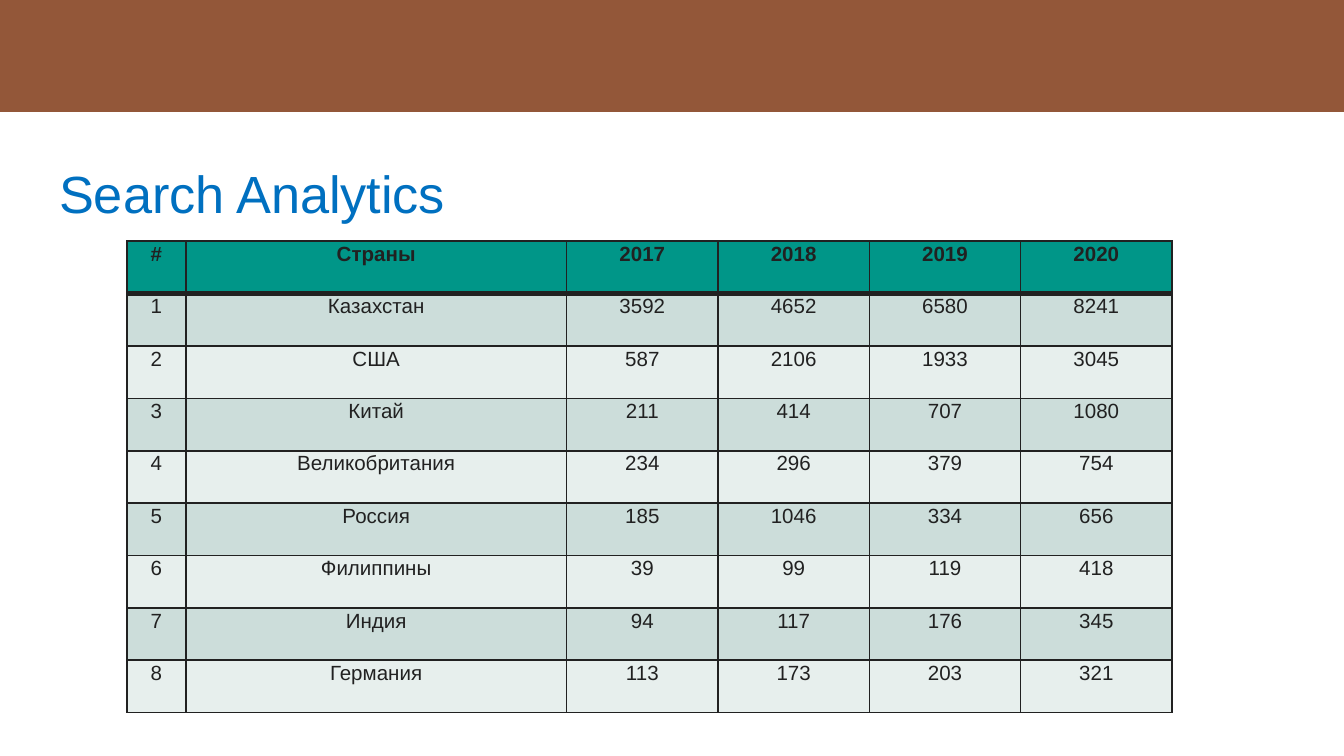
from lxml.etree import SubElement
from pptx import Presentation
from pptx.dml.color import RGBColor
from pptx.enum.shapes import MSO_SHAPE as Preset
from pptx.enum.text import MSO_ANCHOR as Anchor, PP_ALIGN as Align
from pptx.oxml.ns import qn
from pptx.util import Cm, Pt

INK = RGBColor(0x21, 0x21, 0x21)
WHITE = RGBColor(0xFF, 0xFF, 0xFF)
BROWN = RGBColor(0x93, 0x57, 0x39)
BLUE = RGBColor(0x00, 0x70, 0xC0)
TEAL = RGBColor(0x00, 0x96, 0x88)
BAND_DARK = RGBColor(0xCC, 0xDD, 0xDA)
BAND_LIGHT = RGBColor(0xE7, 0xEF, 0xED)

PAGE_WIDTH, PAGE_HEIGHT, BANNER_HEIGHT = 25.4, 14.29, 2.11
COLUMN_WIDTHS = [1.11, 7.2] + [2.86] * 4
ROW_HEIGHT = 0.99
HEADINGS = ["#", "Страны", "2017", "2018", "2019", "2020"]
COUNTRIES = [
    ("Казахстан", 3592, 4652, 6580, 8241),
    ("США", 587, 2106, 1933, 3045),
    ("Китай", 211, 414, 707, 1080),
    ("Великобритания", 234, 296, 379, 754),
    ("Россия", 185, 1046, 334, 656),
    ("Филиппины", 39, 99, 119, 418),
    ("Индия", 94, 117, 176, 345),
    ("Германия", 113, 173, 203, 321),
]


def assign(target, values):
    for name, value in values.items():
        setattr(target, name, value)


class PageBuilder:
    font_name = "Arial"

    def __init__(self, page):
        self.page = page

    def background(self, color):
        fill = self.page.background.fill
        fill.solid()
        fill.fore_color.rgb = color

    def panel(self, top, height, color, line_width):
        shape = self.page.shapes.add_shape(
            Preset.RECTANGLE, Cm(0), Cm(top), Cm(PAGE_WIDTH), Cm(height))
        shape.shadow.inherit = False
        shape.fill.solid()
        shape.fill.fore_color.rgb = color
        shape.line.color.rgb = color
        shape.line.width = Pt(line_width)

    def add_span(self, para, text, size, color, bold=False):
        span = para.add_run()
        span.text = text
        assign(span.font, {"name": self.font_name, "size": Pt(size), "bold": bold})
        span.font.color.rgb = color

    def title(self, text, left, top, width, height):
        box = self.page.shapes.add_textbox(Cm(left), Cm(top), Cm(width), Cm(height))
        inset = Cm(0.25)
        assign(box.text_frame, {
            "word_wrap": True, "vertical_anchor": Anchor.TOP,
            "margin_left": inset, "margin_right": inset,
            "margin_top": inset, "margin_bottom": inset})
        self.add_span(box.text_frame.paragraphs[0], text, 28, BLUE)

    def borders(self, cell, widths):
        properties = cell._tc.get_or_add_tcPr()
        for side, width in widths.items():
            line = SubElement(properties, qn(f"a:ln{side}"), w=str(Pt(width)))
            fill = SubElement(line, qn("a:solidFill"))
            SubElement(fill, qn("a:srgbClr"), val=str(INK))

    def cell(self, cell, text, color, bold, widths):
        self.borders(cell, widths)
        cell.fill.solid()
        cell.fill.fore_color.rgb = color
        assign(cell, {
            "margin_left": Cm(0.18), "margin_right": Cm(0.18),
            "margin_top": 0, "margin_bottom": 0})
        para = cell.text_frame.paragraphs[0]
        assign(para, {"alignment": Align.CENTER, "line_spacing": 1.07,
                      "space_after": Pt(10)})
        self.add_span(para, text, 11, INK, bold)

    def table(self, rows, left, top):
        table = self.page.shapes.add_table(
            len(rows), len(COLUMN_WIDTHS), Cm(left), Cm(top),
            Cm(sum(COLUMN_WIDTHS)), Cm(ROW_HEIGHT * len(rows))).table
        for column, width in zip(table.columns, COLUMN_WIDTHS):
            column.width = Cm(width)
        for number, values in enumerate(rows):
            table.rows[number].height = Cm(ROW_HEIGHT)
            heading = number == 0
            band = BAND_DARK if number % 2 else BAND_LIGHT
            color = TEAL if heading else band
            widths = {"L": 1, "R": 1, "T": 3 if number == 1 else 1,
                      "B": 3 if heading else 1}
            for position, value in enumerate(values):
                self.cell(table.cell(number, position), str(value),
                          color, heading, widths)


def main():
    deck = Presentation()
    assign(deck, {"slide_width": Cm(PAGE_WIDTH), "slide_height": Cm(PAGE_HEIGHT)})
    builder = PageBuilder(deck.slides.add_slide(deck.slide_layouts[6]))
    builder.background(INK)
    builder.panel(BANNER_HEIGHT, PAGE_HEIGHT - BANNER_HEIGHT, WHITE, 2)
    builder.panel(0, BANNER_HEIGHT, BROWN, 0.75)
    builder.title("Search Analytics", 0.87, 2.8, 23.67, 1.6)
    ranked = [(rank, *country) for rank, country in enumerate(COUNTRIES, 1)]
    builder.table([HEADINGS] + ranked, 2.4, 4.56)
    deck.save("out.pptx")


if __name__ == "__main__":
    main()
